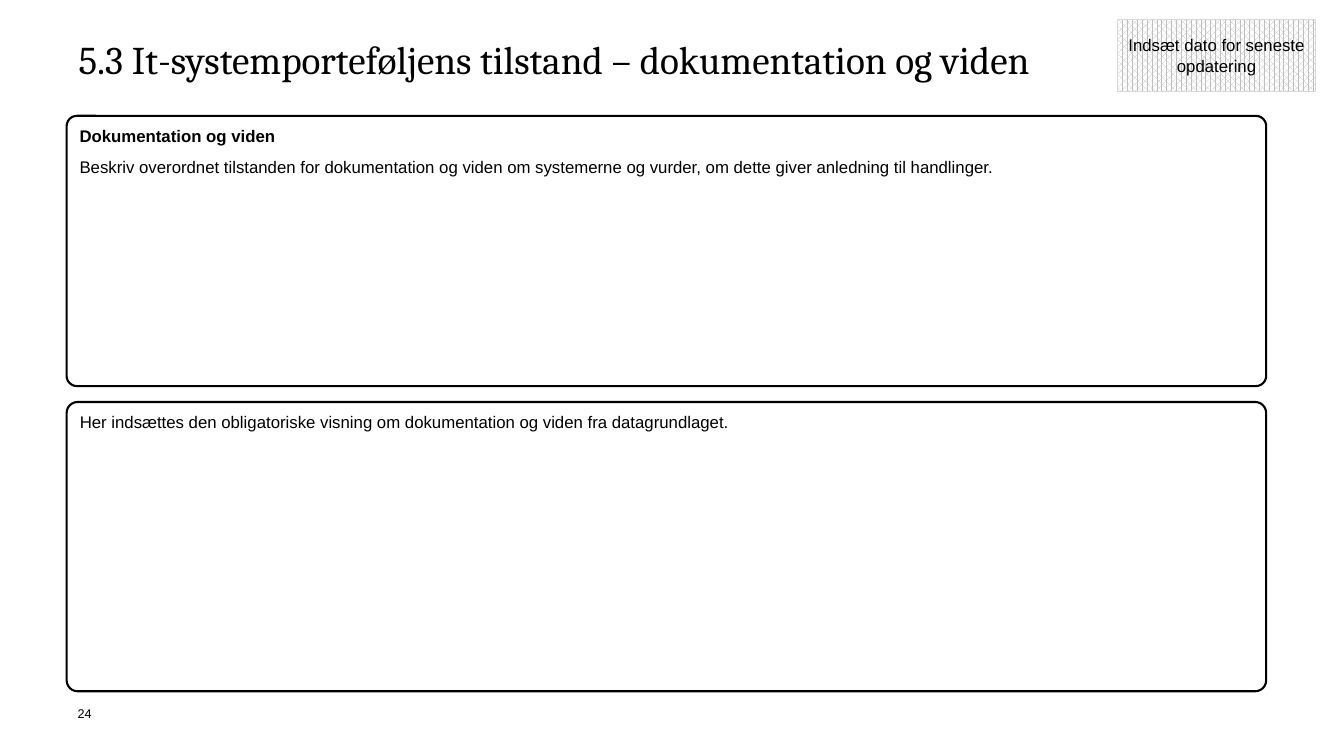
import pptx
import pptx.dml.color
import pptx.enum.dml
import pptx.enum.shapes
import pptx.enum.text
import pptx.util

Cm = pptx.util.Cm
Pt = pptx.util.Pt
RGBColor = pptx.dml.color.RGBColor
SHAPE = pptx.enum.shapes.MSO_SHAPE
ALIGN = pptx.enum.text.PP_ALIGN
ANCHOR = pptx.enum.text.MSO_ANCHOR

BLACK = RGBColor(0x00, 0x00, 0x00)
WHITE = RGBColor(0xFF, 0xFF, 0xFF)
PATTERN_GREY = RGBColor(0xBF, 0xBF, 0xBF)
BORDER_GREY = RGBColor(0xD9, 0xD9, 0xD9)

PANEL_LEFT, PANEL_TOP, PANEL_WIDTH, PANEL_GAP = 1.68, 2.92, 30.23, 0.4
PANELS = [
    (6.81, [
        ("Dokumentation og viden", True),
        ("Beskriv overordnet tilstanden for dokumentation og viden om systemerne "
         "og vurder, om dette giver anledning til handlinger.", False),
    ]),
    (7.29, [
        ("Her indsættes den obligatoriske visning om dokumentation og viden "
         "fra datagrundlaget.", False),
    ]),
]


def write(p, text, *, font="Arial", size=12, bold=False, align=ALIGN.LEFT,
          spacing=1.0, before=0):
    """Fill a paragraph with one formatted run."""
    p.alignment = align
    p.line_spacing = spacing
    p.space_before = Pt(before)
    r = p.add_run()
    r.text = text
    r.font.name = font
    r.font.size = Pt(size)
    r.font.bold = bold
    r.font.color.rgb = BLACK


def set_frame(tf, anchor, inset_x=0, inset_y=0):
    tf.word_wrap = True
    tf.vertical_anchor = anchor
    tf.margin_left = tf.margin_right = Cm(inset_x)
    tf.margin_top = tf.margin_bottom = Cm(inset_y)


def add_text(s, left, top, width, height, text, **fmt):
    sp = s.shapes.add_textbox(Cm(left), Cm(top), Cm(width), Cm(height))
    set_frame(sp.text_frame, ANCHOR.TOP)
    write(sp.text_frame.paragraphs[0], text, **fmt)


def add_box(s, kind, left, top, width, height, line, line_width, anchor):
    sp = s.shapes.add_shape(kind, Cm(left), Cm(top), Cm(width), Cm(height))
    sp.shadow.inherit = False
    sp.fill.background()
    sp.line.color.rgb = line
    sp.line.width = Pt(line_width)
    set_frame(sp.text_frame, anchor, 0.25, 0.13)
    return sp


def add_panel(s, top, height, paragraphs):
    sp = add_box(s, SHAPE.ROUNDED_RECTANGLE, PANEL_LEFT, top, PANEL_WIDTH, height,
                 BLACK, 1.5, ANCHOR.TOP)
    sp.adjustments[0] = 0.038
    tf = sp.text_frame
    for i, (text, bold) in enumerate(paragraphs):
        p = tf.add_paragraph() if i else tf.paragraphs[0]
        write(p, text, bold=bold, spacing=1.08, before=7 if i else 0)


def add_date_box(s, text):
    sp = add_box(s, SHAPE.RECTANGLE, 28.17, 0.48, 4.98, 1.83,
                 BORDER_GREY, 0.5, ANCHOR.MIDDLE)
    sp.fill.patterned()
    sp.fill.pattern = pptx.enum.dml.MSO_PATTERN.PERCENT_70
    sp.fill.fore_color.rgb = PATTERN_GREY
    sp.fill.back_color.rgb = WHITE
    write(sp.text_frame.paragraphs[0], text, align=ALIGN.CENTER)


def main():
    prs = pptx.Presentation()
    prs.slide_width, prs.slide_height = Cm(33.87), Cm(19.05)
    s = prs.slides.add_slide(prs.slide_layouts[6])

    # Slide number and title
    add_text(s, 1.96, 17.78, 0.79, 0.76, "24", size=9)
    add_text(s, 1.98, 1.02, 29.97, 2.59,
             "5.3 It-systemporteføljens tilstand – dokumentation og viden",
             font="Cambria", size=28, spacing=0.9)

    # Stacked panels
    top = PANEL_TOP
    for height, paragraphs in PANELS:
        add_panel(s, top, height, paragraphs)
        top += height + PANEL_GAP

    # Date of latest update
    add_date_box(s, "Indsæt dato for seneste opdatering")

    prs.save("out.pptx")


if __name__ == "__main__":
    main()
